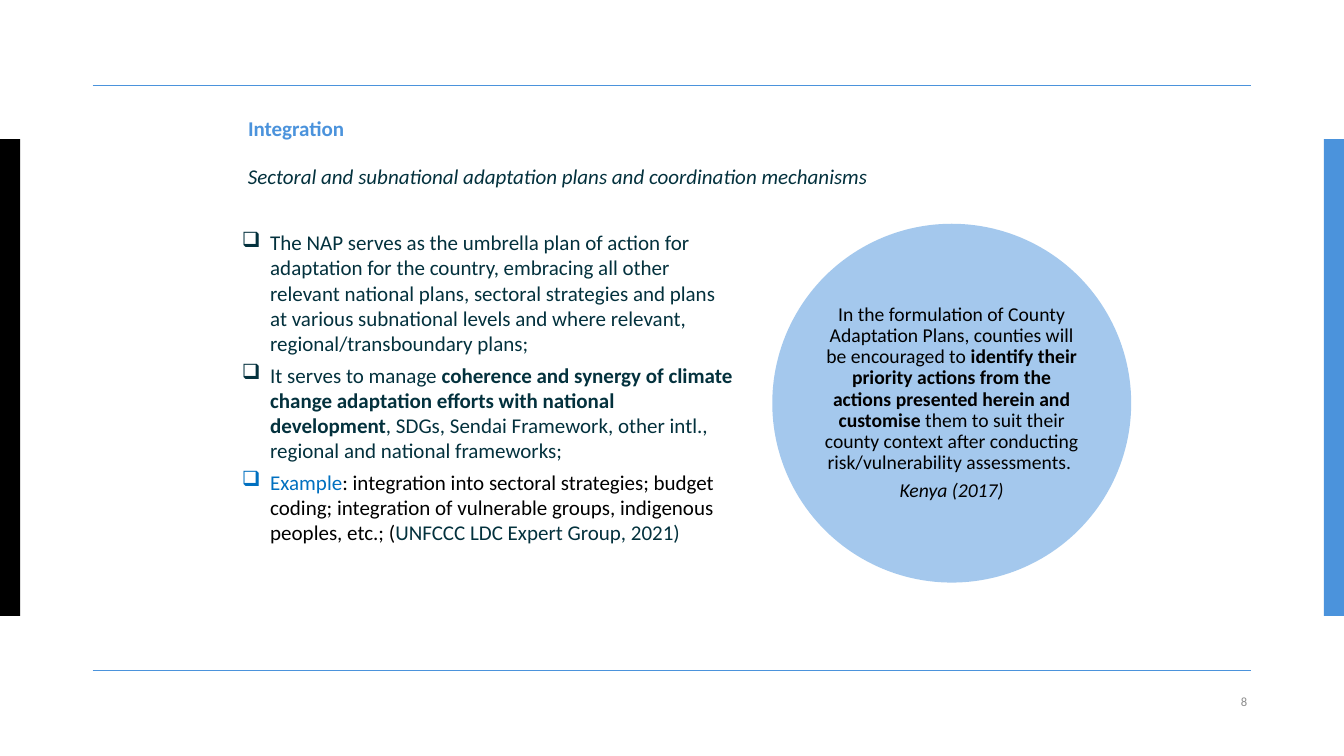
from lxml.etree import SubElement
from pptx import Presentation
from pptx.dml.color import RGBColor
from pptx.enum.shapes import MSO_CONNECTOR, MSO_SHAPE
from pptx.enum.text import MSO_ANCHOR, MSO_AUTO_SIZE, PP_ALIGN
from pptx.oxml.ns import qn
from pptx.util import Inches, Pt

BLUE = RGBColor(0x4B, 0x93, 0xDC)
LINK = RGBColor(0x00, 0x70, 0xC0)
TEAL = RGBColor(0x03, 0x31, 0x3D)
BLACK = RGBColor(0, 0, 0)
GREY = RGBColor(0x8C, 0x8C, 0x8C)

# Content: each paragraph is a list of (text, run format)
TITLE = [[("Integration", {"bold": True})]]
LEAD = [[("Sectoral and subnational adaptation plans and coordination mechanisms",
          {"italic": True})]]
POINTS = [
    [("The NAP serves as the umbrella plan of action for adaptation for the country, "
      "embracing all other relevant national plans, sectoral strategies and plans at "
      "various subnational levels and where relevant, regional/transboundary plans;", {})],
    [("It serves to manage ", {}),
     ("coherence and synergy of climate change adaptation efforts with national "
      "development", {"bold": True}),
     (", SDGs, Sendai Framework, other intl., regional and national frameworks;", {})],
    [("Example", {"color": LINK}),
     (": integration into sectoral strategies; budget coding; integration of vulnerable "
      "groups, indigenous peoples, etc.; (", {"color": BLACK}),
     ("UNFCCC LDC Expert Group, 2021)", {})],
]
QUOTE = [
    [("In the formulation of County Adaptation Plans, counties will be encouraged to ", {}),
     ("identify their priority actions from the actions presented herein and customise ",
      {"bold": True}),
     ("them to suit their county context after conducting risk/vulnerability "
      "assessments. ", {})],
    [("Kenya (2017)", {"italic": True})],
]
NUMBER = [[("8", {})]]
BARS = [(0, BLACK), (13.13, BLUE)]
RULES = [0.85, 6.65]


def write(shape, paras, size=15, color=TEAL, align=PP_ALIGN.LEFT, anchor=MSO_ANCHOR.TOP,
          inset=(0.1, 0.05), before=0, after=0, line=None, bullet=None):
    frame = shape.text_frame
    frame.word_wrap = True
    frame.auto_size = MSO_AUTO_SIZE.NONE
    frame.vertical_anchor = anchor
    frame.margin_left = frame.margin_right = Inches(inset[0])
    frame.margin_top = frame.margin_bottom = Inches(inset[1])
    for i, runs in enumerate(paras):
        para = frame.add_paragraph() if i else frame.paragraphs[0]
        para.alignment = align
        para.space_before = Pt(before if i else 0)
        para.space_after = Pt(after)
        if line:
            para.line_spacing = line
        if bullet:
            props = para._p.get_or_add_pPr()
            props.set("marL", str(Inches(0.28)))
            props.set("indent", str(-Inches(0.28)))
            SubElement(props, qn("a:buChar")).set("char", bullet)
        for text, style in runs:
            run = para.add_run()
            run.text = text
            font = run.font
            font.name, font.size = "Calibri", Pt(size)
            font.bold = style.get("bold", False)
            font.italic = style.get("italic", False)
            font.color.rgb = style.get("color", color)


def place(*box):
    return [Inches(v) for v in box]


deck = Presentation()
deck.slide_width, deck.slide_height = place(13.33, 7.5)
slide = deck.slides.add_slide(deck.slide_layouts[5])
shapes = slide.shapes


def solid(kind, box, color):
    shape = shapes.add_shape(kind, *place(*box))
    shape.shadow.inherit = False
    shape.fill.solid()
    shape.fill.fore_color.rgb = color
    shape.line.fill.background()
    return shape


# Side bars and rules
for left, color in BARS:
    solid(MSO_SHAPE.RECTANGLE, (left, 1.38, 0.2, 4.73), color)
for y in RULES:
    rule = shapes.add_connector(MSO_CONNECTOR.STRAIGHT, *place(0.92, y, 12.41, y))
    rule.line.color.rgb = BLUE
    rule.line.width = Pt(1)
    SubElement(rule._element.spPr, qn("a:effectLst"))

# Title
title = shapes.title
title.left, title.top, title.width, title.height = place(2.36, 1.16, 8.61, 0.32)
write(title, TITLE, color=BLUE, anchor=MSO_ANCHOR.MIDDLE, line=Pt(11.2))

# Lead line, points and page number
write(shapes.add_textbox(*place(2.36, 1.57, 6.35, 0.61)), LEAD)
write(shapes.add_textbox(*place(2.4, 2.28, 4.88, 3.14)), POINTS,
      inset=(0, 0), before=4.5, bullet="❑")
write(shapes.add_textbox(*place(11.83, 6.82, 0.61, 0.28)), NUMBER, size=9, color=GREY,
      align=PP_ALIGN.RIGHT, anchor=MSO_ANCHOR.MIDDLE, inset=(0.07, 0.04))

# Quote circle, half transparent
circle = solid(MSO_SHAPE.OVAL, (7.66, 2.22, 3.56, 3.56), BLUE)
tint = circle._element.spPr.find(qn("a:solidFill"))[0]
SubElement(tint, qn("a:alpha")).set("val", "50000")
write(circle, QUOTE, size=14, color=BLACK, align=PP_ALIGN.CENTER,
      anchor=MSO_ANCHOR.MIDDLE, inset=(0, 0), after=4.9, line=0.9)

deck.save("out.pptx")
